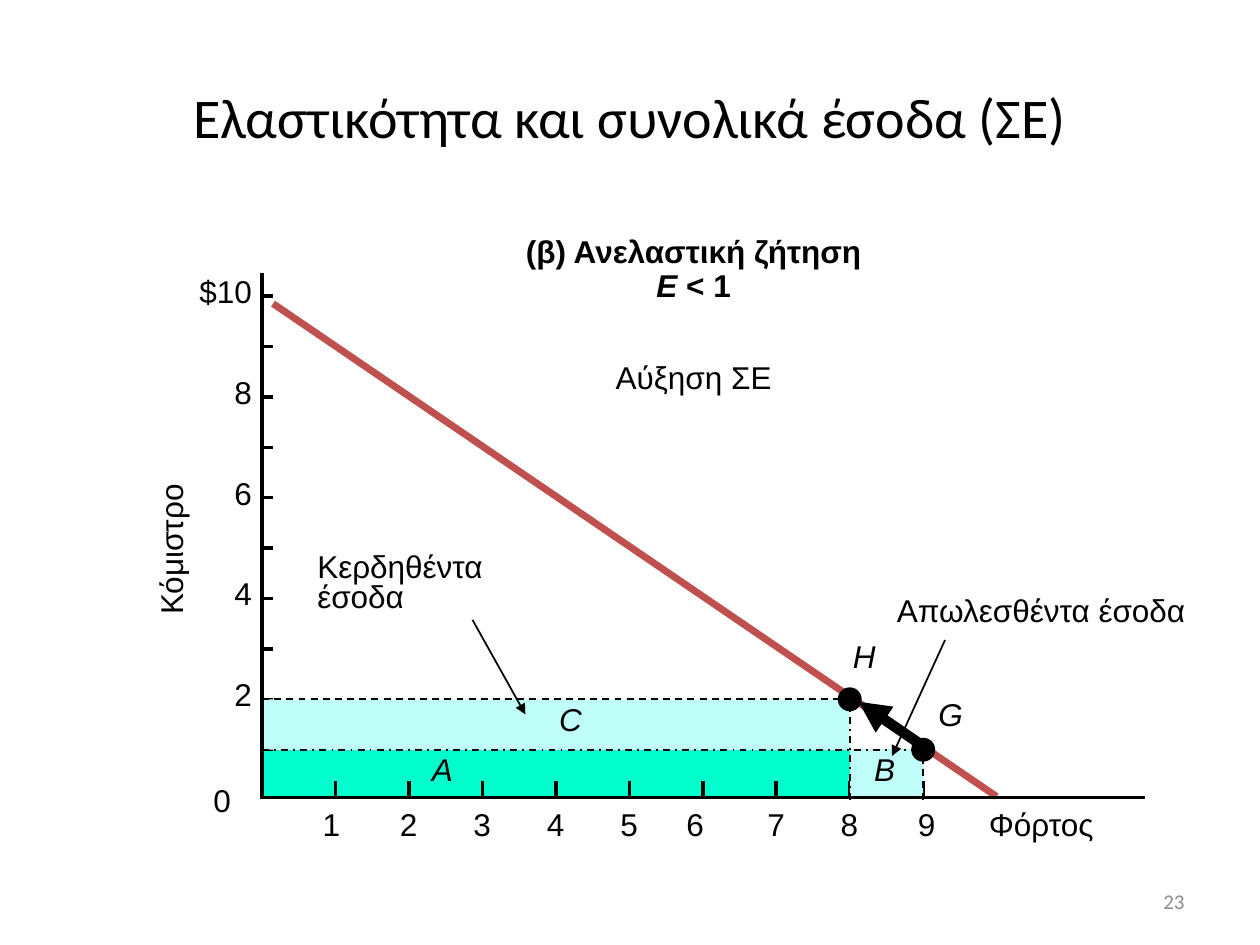
from collections import namedtuple
from dataclasses import dataclass

from lxml.etree import SubElement
from pptx import Presentation
from pptx.dml.color import RGBColor
from pptx.enum.dml import MSO_LINE
from pptx.enum.shapes import MSO_CONNECTOR, MSO_SHAPE
from pptx.enum.text import MSO_ANCHOR, PP_ALIGN
from pptx.oxml.ns import qn
from pptx.util import Emu, Pt

PX = 9144  # one px is a hundredth of an inch
Box = namedtuple("Box", "left top width height")


@dataclass(frozen=True)
class Theme:
    ink: str = "000000"
    demand: str = "C0504D"
    kept: str = "00FFCC"
    changed: str = "C0FEF9"
    muted: str = "8C8C8C"
    heading_font: str = "Calibri"
    label_font: str = "Arial"
    title_size: int = 32
    label_size: int = 18
    page_size: int = 12


THEME = Theme()


def px(value):
    return Emu(round(value * PX))


def rgb(color):
    return RGBColor.from_string(color)


def add_label(slide, box, text, align=PP_ALIGN.LEFT, size=THEME.label_size,
              font=THEME.label_font, color=THEME.ink, bold=None, italic=None,
              spacing=None, anchor=MSO_ANCHOR.TOP, inset=10):
    label = slide.shapes.add_textbox(*map(px, box))
    frame = label.text_frame
    frame.word_wrap = True
    frame.vertical_anchor = anchor
    frame.margin_left = frame.margin_right = px(inset)
    frame.margin_top = frame.margin_bottom = px(inset / 2)
    frame.text = text
    for paragraph in frame.paragraphs:
        paragraph.alignment = align
        paragraph.line_spacing = spacing
        for run in paragraph.runs:
            run.font.name, run.font.size = font, Pt(size)
            run.font.bold, run.font.italic = bold, italic
            run.font.color.rgb = rgb(color)
    return label


def add_line(slide, start, end, width, color=THEME.ink, dash=None, arrow=False):
    line = slide.shapes.add_connector(MSO_CONNECTOR.STRAIGHT, *map(px, (*start, *end)))
    line.line.color.rgb = rgb(color)
    line.line.width = Pt(width)
    if dash is not None:
        line.line.dash_style = dash
    if arrow:
        SubElement(line.line._get_or_add_ln(), qn("a:tailEnd"), type="triangle")
    SubElement(line._element.spPr, qn("a:effectLst"))


def add_solid(slide, preset, box, color):
    solid = slide.shapes.add_shape(preset, *map(px, box))
    solid.shadow.inherit = False
    solid.fill.solid()
    solid.fill.fore_color.rgb = rgb(color)
    solid.line.fill.background()


def add_title(slide, box):
    add_label(slide, box, "Ελαστικότητα και συνολικά έσοδα (ΣΕ)", PP_ALIGN.CENTER,
              THEME.title_size, THEME.heading_font, anchor=MSO_ANCHOR.MIDDLE)


def add_page_number(slide, box):
    add_label(slide, box, "23", PP_ALIGN.RIGHT, THEME.page_size, THEME.heading_font,
              THEME.muted, anchor=MSO_ANCHOR.MIDDLE)


def add_demand_plot(slide, box):
    base = box.top + box.height

    def at(quantity, price):
        return box.left + 58.3 * quantity, base + 2 - 40 * price

    def inside(left, top, width, height):
        return Box(box.left + left, box.top + top, width, height)

    def revenue_area(q_from, q_to, p_from, p_to, color):
        left, top = at(q_from, p_to)
        right, bottom = at(q_to, p_from)
        add_solid(slide, MSO_SHAPE.RECTANGLE,
                  (left, top, right - left, min(bottom, base) - top), color)

    def point(quantity, price):
        x, y = at(quantity, price)
        add_solid(slide, MSO_SHAPE.OVAL, (x - 9.5, y - 9.5, 19, 19), THEME.ink)

    def letter(text, left, top):
        add_label(slide, inside(left, top, 44, 50), text, italic=True)

    # Revenue kept at both prices
    revenue_area(0, 9, 0, 1, THEME.kept)
    letter("A", 125, 373)

    # Ticks and their numbers
    nudges = {1: -3, 6: -6, 9: 3}
    for quantity in range(10):
        x, _ = at(quantity, 0)
        add_line(slide, (x, base + 1), (x, base - 13), 2)
        if quantity:
            add_label(slide, (x - 17 + nudges.get(quantity, 0), base + 1, 38, 50),
                      str(quantity))
    for price in range(1, 11):
        x, y = at(0, price)
        add_line(slide, (x, y), (x + 9, y), 2)
        if price % 2 == 0:
            add_label(slide, (x - 64, y - 19, 56, 40), "$10" if price == 10 else str(price),
                      PP_ALIGN.RIGHT, inset=0)
    add_label(slide, inside(-53, 398, 38, 50), "0", PP_ALIGN.RIGHT)

    # Axis names and headings
    fare = add_label(slide, inside(-135, 200, 125, 40), "Κόμιστρο", PP_ALIGN.RIGHT)
    fare.rotation = 270
    add_label(slide, inside(567, base - box.top + 1, 114, 40), "Φόρτος")
    heading = add_label(slide, inside(188, -34, 309, 64), "(β) Ανελαστική ζήτηση\nE < 1",
                        PP_ALIGN.CENTER, bold=True, spacing=0.9)
    condition = heading.text_frame.paragraphs[1]
    elasticity = condition.runs[0]
    elasticity.text = "E "
    elasticity.font.italic = True
    comparison = condition.add_run()
    comparison.text = "< 1"
    comparison.font.name, comparison.font.size = THEME.label_font, Pt(THEME.label_size)
    comparison.font.bold = True
    comparison.font.color.rgb = rgb(THEME.ink)
    add_label(slide, inside(260, 66, 165, 37), "Αύξηση ΣΕ", PP_ALIGN.CENTER, spacing=0.9)

    # Demand line, gained and lost revenue
    add_line(slide, at(0.15, 9.85), at(10, 0.07), 4, THEME.demand)
    revenue_area(0, 8, 1, 2, THEME.changed)
    letter("C", 226, 334)
    point(8, 2)
    letter("H", 459, 284)
    revenue_area(8, 9, 0, 1, THEME.changed)
    letter("B", 476, 373)
    add_line(slide, at(9, 1.07), at(8.12, 1.95), 6, arrow=True)

    # Axes
    axes = slide.shapes.build_freeform(px(box.left), px(box.top))
    axes.add_line_segments([(px(box.left), px(base)),
                            (px(box.left + box.width), px(base))], close=False)
    axes = axes.convert_to_shape()
    axes.shadow.inherit = False
    axes.fill.background()
    axes.line.color.rgb = rgb(THEME.ink)
    axes.line.width = Pt(2)

    # Guides to both points
    for start, end, dash in (
        (at(9, 0), at(9, 1), MSO_LINE.DASH),
        (at(0, 1), at(9, 1), MSO_LINE.DASH_DOT),
        (at(8, 0), at(8, 2), MSO_LINE.DASH_DOT),
        (at(0, 2), at(8, 2), MSO_LINE.DASH),
    ):
        add_line(slide, start, end, 1, dash=dash)
    point(9, 1)
    letter("G", 527, 330)

    # Callouts
    for text, text_box, tail, tip in (
        ("Απωλεσθέντα έσοδα", (494, 253, 264, 34), (542, 291), (500, 383)),
        ("Κερδηθέντα έσοδα", (34, 218, 170, 58), (167, 275), (209, 350)),
    ):
        add_label(slide, inside(*text_box), text, spacing=0.8)
        add_line(slide, inside(*tail, 0, 0)[:2], inside(*tip, 0, 0)[:2], 1, arrow=True)


def main():
    deck = Presentation()
    deck.slide_width, deck.slide_height = px(1000), px(750)
    slide = deck.slides.add_slide(deck.slide_layouts[6])
    add_title(slide, Box(50, 30, 900, 125))
    add_demand_plot(slide, Box(208, 217, 701, 416))
    add_page_number(slide, Box(717, 695, 233, 40))
    deck.save("out.pptx")


if __name__ == "__main__":
    main()
